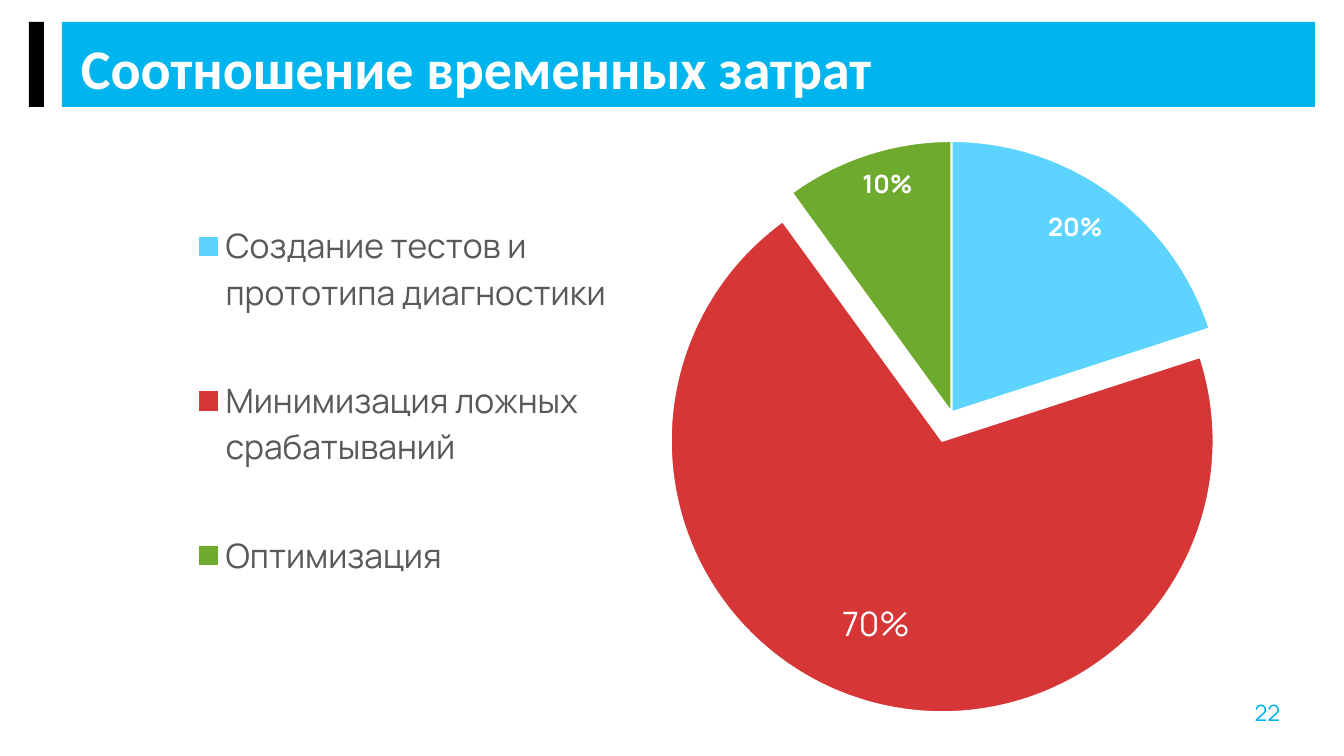
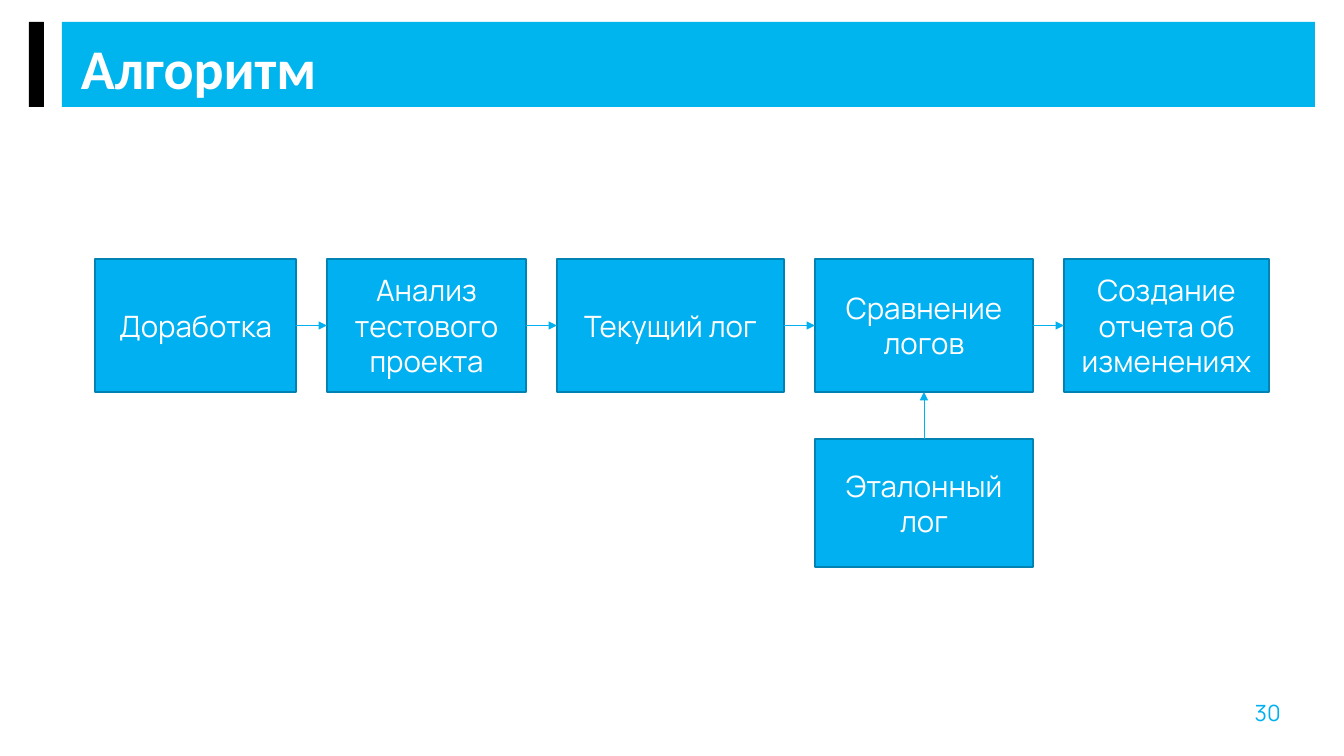
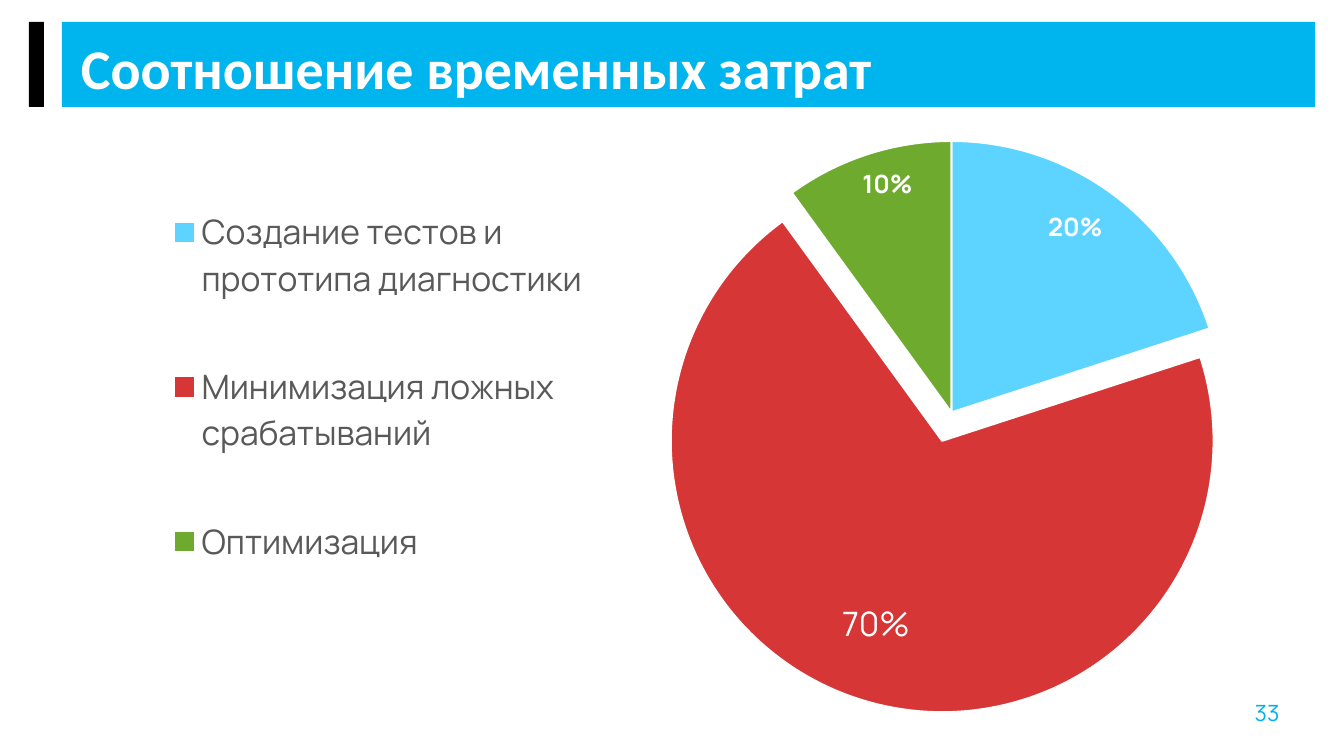
from dataclasses import dataclass
from lxml import etree
from pptx import Presentation
from pptx import util as u
from pptx.chart.data import CategoryChartData
from pptx.dml.color import RGBColor as Rgb
from pptx.enum import chart as ch, shapes as sh, text as tx
from pptx.oxml import parse_xml
from pptx.oxml.ns import nsdecls, qn

PX = 914400 / 100.8


@dataclass
class Theme:
    band: str = "00B4ED"
    mark: str = "000000"
    box: str = "00B0F0"
    edge: str = "0082B2"
    white: str = "FFFFFF"
    gray: str = "595959"
    pie: tuple = ("5DD4FF", "D63636", "6EAA2E")
    head: str = "Calibri"
    body: str = "Manrope"
    title: int = 40
    key: int = 24
    step: int = 21
    label: int = 18
    page: int = 16


T = Theme()


def px(*nums):
    return [u.Emu(round(n * PX)) for n in nums]


def write(slide, words, at, size, color=T.white, font=T.body, bold=False,
          fill=None, edge=None, align=tx.PP_ALIGN.LEFT,
          anchor=tx.MSO_ANCHOR.TOP, lead=None, before=None,
          kind=sh.MSO_SHAPE.RECTANGLE):
    shape = slide.shapes.add_shape(kind, *px(*at))
    shape.shadow.inherit = False
    for part, tone in ((shape.fill, fill), (shape.line.fill, edge)):
        if tone:
            part.solid()
            part.fore_color.rgb = Rgb.from_string(tone)
        else:
            part.background()
    if edge:
        shape.line.width = u.Pt(1)
    frame = shape.text_frame
    frame.word_wrap = True
    frame.vertical_anchor = anchor
    if words:
        para = frame.paragraphs[0]
        para.alignment = align
        para.line_spacing = lead
        para.space_before = before
        run = para.add_run()
        run.text = words
        run.font.size, run.font.name, run.font.bold = u.Pt(size), font, bold
        run.font.color.rgb = Rgb.from_string(color)
    return shape


deck = Presentation()
deck.slide_width, deck.slide_height = px(1344, 756)

# Shared bands, titles and page numbers
pages = (("Соотношение временных затрат", "22"), ("Алгоритм", "30"),
         ("Соотношение временных затрат", "33"))
slides = []
for title, page in pages:
    slide = deck.slides.add_slide(deck.slide_layouts[6])
    write(slide, "", (62, 22, 1253, 85), 0, fill=T.band)
    write(slide, "", (29, 22, 15, 85), 0, fill=T.mark)
    write(slide, title, (71, 36, 1221, 44), T.title, font=T.head, bold=True,
          lead=0.9, before=u.Pt(10))
    write(slide, page, (1231, 683, 95, 78), T.page, T.box,
          kind=sh.MSO_SHAPE.OVAL)
    slides.append(slide)

# Pie charts: only the place of the legend differs
for slide, left, top in ((slides[0], 181, 161), (slides[2], 157, 147)):
    data = CategoryChartData(number_format="0%")
    data.categories = ("Создание тестов и прототипа диагностики",
                       "Минимизация ложных срабатываний", "Оптимизация")
    data.add_series("Series 1", (0.2, 0.7, 0.1))
    cx, cy, wide, high = 157, 88, 1300, 659
    chart = slide.shapes.add_chart(ch.XL_CHART_TYPE.PIE,
                                   *px(cx, cy, wide, high), data).chart
    chart.has_title = False
    chart.font.name = T.body
    chart.font.size = u.Pt(10)
    chart.has_legend = True
    legend = chart.legend
    legend.position = ch.XL_LEGEND_POSITION.BOTTOM
    legend.include_in_layout = False
    legend.font.size, legend.font.name = u.Pt(T.key), T.body
    legend.font.color.rgb = Rgb.from_string(T.gray)

    # Slices and labels
    plot = chart.plots[0]
    plot.vary_by_categories = True
    pie = plot.series[0]
    labels = pie.data_labels
    labels.show_value = True
    labels.show_percentage = False
    labels.number_format, labels.number_format_is_linked = "0%", False
    labels.position = ch.XL_LABEL_POSITION.INSIDE_END
    fonts = [(labels.font, T.label, True)]
    for i, tone in enumerate(T.pie):
        look = pie.points[i].format
        look.fill.solid()
        look.fill.fore_color.rgb = Rgb.from_string(tone)
        look.line.color.rgb = Rgb.from_string(T.white)
        look.line.width = u.Pt(1.5)
        label = pie.points[i].data_label
        if i == 1:
            run = label.text_frame.paragraphs[0].add_run()
            run.text = "70%"
            fonts.append((run.font, T.key, False))
        else:
            fonts.append((label.font, T.label, True))
        label.position = ch.XL_LABEL_POSITION.INSIDE_END
    for font, size, bold in fonts:
        font.size, font.bold, font.name = u.Pt(size), bold, T.body
        font.color.rgb = Rgb.from_string(T.white)

    # Pulled-out slice and manual layouts
    root = chart._chartSpace
    root.xpath("//c:dPt[c:idx/@val='1']/c:spPr")[0].addprevious(
        parse_xml(f'<c:explosion {nsdecls("c")} val="11"/>'))
    edges = dict(xMode="edge", yMode="edge")
    spots = [
        ("//c:plotArea", 0, dict(layoutTarget="inner", **edges,
                                 x=(680 - cx) / wide, y=(141 - cy) / high,
                                 w=543 / wide, h=543 / high)),
        ("//c:legend", 1, dict(**edges, x=(left - cx) / wide,
                               y=(top - cy) / high,
                               w=442 / wide, h=480 / high)),
    ]
    for i, (dx, dy) in enumerate(((-5, 12), (-18, -46), (-7, 6))):
        spots.append((f"//c:dLbl[c:idx/@val='{i}']", 1,
                      dict(x=dx / wide, y=dy / high)))
    for query, index, values in spots:
        host = root.xpath(query)[0]
        for old in host.findall(qn("c:layout")):
            host.remove(old)
        layout = parse_xml(f'<c:layout {nsdecls("c")}><c:manualLayout/></c:layout>')
        for name, value in values.items():
            etree.SubElement(layout[0], qn("c:" + name)).set("val", str(value))
        host.insert(index, layout)

# Algorithm: a row of steps with equal gaps, one step below
slide = slides[1]
steps = (("Доработка", 201), ("Анализ тестового проекта", 199),
         ("Текущий лог", 227), ("Сравнение логов", 218),
         ("Создание отчета об изменениях", 205))
style = dict(size=T.step, fill=T.box, edge=T.edge,
             align=tx.PP_ALIGN.CENTER, anchor=tx.MSO_ANCHOR.MIDDLE)
x, gap, top, high = 95, 31, 259, 133
boxes = []
for words, wide in steps:
    boxes.append(write(slide, words, (x, top, wide, high), **style))
    if words == "Сравнение логов":
        base = write(slide, "Эталонный лог", (x, 439, wide, 128), **style)
        goal = boxes[-1]
    x += wide + gap

# Arrows join side 3 (right) to 1 (left), and 0 (top) to 2 (bottom)
links = [(a, 3, b, 1) for a, b in zip(boxes, boxes[1:])] + [(base, 0, goal, 2)]
for start, out, end, into in links:
    arrow = slide.shapes.add_connector(sh.MSO_CONNECTOR.STRAIGHT, 0, 0, 0, 0)
    arrow.begin_connect(start, out)
    arrow.end_connect(end, into)
    arrow.line.color.rgb = Rgb.from_string(T.box)
    arrow.line.width = u.Pt(0.5)
    props = arrow._element.spPr
    etree.SubElement(props.find(qn("a:ln")), qn("a:tailEnd")).set("type", "triangle")
    etree.SubElement(props, qn("a:effectLst"))

deck.save("out.pptx")
